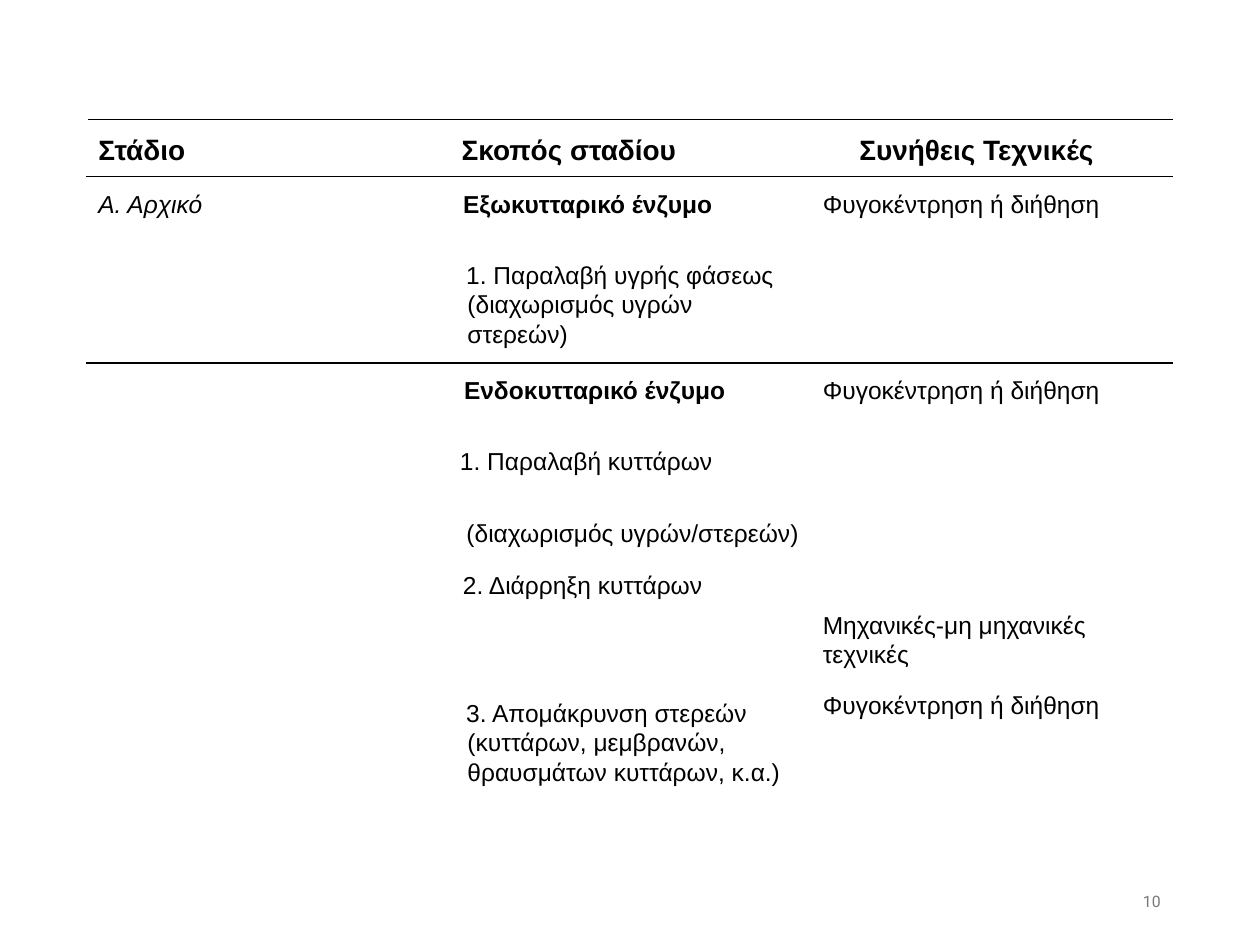
from lxml.etree import SubElement
from pptx import Presentation
from pptx.dml.color import RGBColor
from pptx.enum.text import MSO_ANCHOR as Anchor, PP_ALIGN as Align
from pptx.oxml.ns import qn
from pptx.util import Inches, Pt

COLORS = {"text": "000000", "rule": "000000", "edge": "FFFFFF", "number": "797979"}
NO_GRID_STYLE = "{2D5ABB26-0587-4C30-8999-92F81FD0307C}"
COLUMNS = [2, 3.84, 2.78]
ROWS = [0.45, 1.48, 1.55, 0.95, 0.93]
HANGING = -0.01
CENTER, RIGHT = Align.CENTER, Align.RIGHT


def line(text, indent=0, align=Align.LEFT, size=14, bold=False, italic=False):
    return dict(text=text, indent=indent, align=align, size=size, bold=bold, italic=italic)


def heading(text, indent, align=Align.LEFT):
    return line(text, indent, align, size=16, bold=True)


SEPARATION = [line("Φυγοκέντρηση ή διήθηση")]
STAGES = [
    [[heading("Στάδιο", 0.1)],
     [heading("Σκοπός σταδίου", 0.01, CENTER)],
     [heading("Συνήθεις Τεχνικές", 0.3)]],
    [[line("Α. Αρχικό", 0.1, italic=True)],
     [line("Εξωκυτταρικό ένζυμο", 0.31, CENTER, bold=True),
      line("1. Παραλαβή υγρής φάσεως (διαχωρισμός υγρών στερεών)", 1.02)],
     SEPARATION],
    [[],
     [line("Ενδοκυτταρικό ένζυμο", 0.42, CENTER, bold=True),
      line("1. Παραλαβή κυττάρων ", 0.34, CENTER),
      line("(διαχωρισμός υγρών/στερεών)", 0.3, RIGHT)],
     SEPARATION],
    [[],
     [line("2. Διάρρηξη κυττάρων", 0.23, CENTER)],
     [line("Μηχανικές-μη μηχανικές τεχνικές")]],
    [[],
     [line("3. Απομάκρυνση στερεών (κυττάρων, μεμβρανών, θραυσμάτων κυττάρων, κ.α.)", 1.02)],
     SEPARATION],
]
BOTTOM_CELLS = {(3, 2), (4, 1)}


def add_run(paragraph, text, font_name, size, color, bold=False, italic=False):
    run = paragraph.add_run()
    run.text = text
    font = run.font
    font.name, font.size, font.bold, font.italic = font_name, Pt(size), bold, italic
    font.color.rgb = RGBColor.from_string(COLORS[color])


def add_border(cell, side, color):
    border = SubElement(cell._tc.get_or_add_tcPr(), qn(f"a:ln{side}"), w=str(Pt(1)))
    fill = SubElement(border, qn("a:solidFill"))
    SubElement(fill, qn("a:srgbClr"), val=COLORS[color])


def write_lines(text_frame, lines):
    for index, item in enumerate(lines):
        paragraph = text_frame.paragraphs[0] if index == 0 else text_frame.add_paragraph()
        paragraph.alignment = item["align"]
        paragraph.line_spacing = 1.07
        paragraph.space_after = Pt(23.9)
        properties = paragraph._p.get_or_add_pPr()
        properties.set("marL", str(Inches(item["indent"])))
        properties.set("indent", str(Inches(HANGING)))
        add_run(paragraph, item["text"], "Arial", item["size"], "text",
                item["bold"], item["italic"])


def format_cell(cell, row, column):
    cell.margin_left, cell.margin_top = 0, Inches(0.1)
    cell.margin_right, cell.margin_bottom = Inches(0.19), Inches(0.07)
    if row == 0:
        cell.vertical_anchor = Anchor.MIDDLE
    else:
        cell.vertical_anchor = Anchor.BOTTOM if (row, column) in BOTTOM_CELLS else Anchor.TOP
    if column == 0:
        add_border(cell, "L", "edge")
    if row <= 1:
        add_border(cell, "T", "rule")
    if row == 0:
        add_border(cell, "B", "rule")
    cell.fill.background()


def add_stage_table(slide, left, top):
    frame = slide.shapes.add_table(len(ROWS), len(COLUMNS), left, top,
                                   Inches(sum(COLUMNS)), Inches(sum(ROWS)))
    table = frame.table
    table.first_row = table.horz_banding = False
    table._tbl.tblPr.find(qn("a:tableStyleId")).text = NO_GRID_STYLE
    for column, width in zip(table.columns, COLUMNS):
        column.width = Inches(width)
    for row, height in zip(table.rows, ROWS):
        row.height = Inches(height)
    for row, stage in enumerate(STAGES):
        for column, lines in enumerate(stage):
            cell = table.cell(row, column)
            format_cell(cell, row, column)
            write_lines(cell.text_frame, lines)


def add_slide_number(slide, left, top, width, height):
    text_frame = slide.shapes.add_textbox(left, top, width, height).text_frame
    text_frame.word_wrap = True
    text_frame.vertical_anchor = Anchor.MIDDLE
    paragraph = text_frame.paragraphs[0]
    paragraph.alignment = RIGHT
    add_run(paragraph, "10", "Roboto", 9, "number")


def main():
    presentation = Presentation()
    presentation.slide_width, presentation.slide_height = Inches(10), Inches(7.5)
    slide = presentation.slides.add_slide(presentation.slide_layouts[6])
    add_stage_table(slide, Inches(0.69), Inches(0.95))
    add_slide_number(slide, Inches(7.06), Inches(6.95), Inches(2.25), Inches(0.4))
    presentation.save("out.pptx")


if __name__ == "__main__":
    main()
